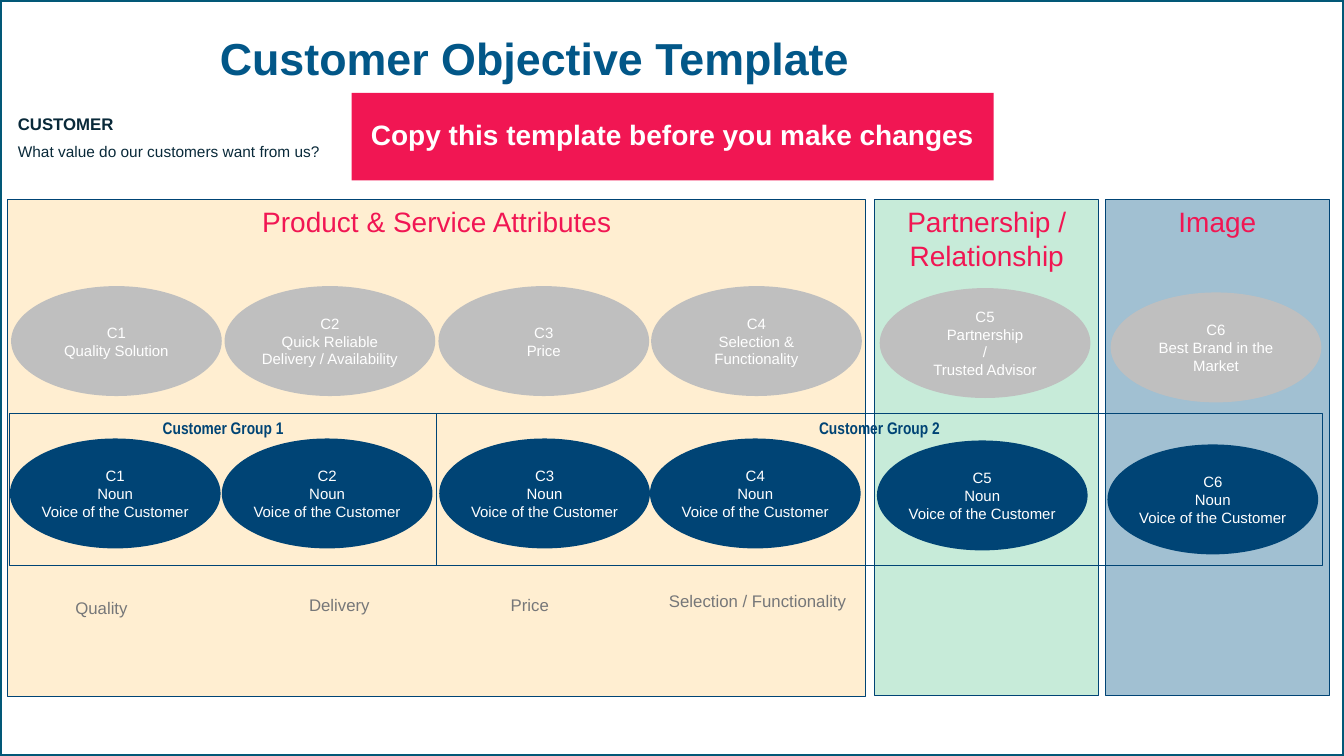
from lxml.etree import SubElement
from pptx import Presentation
from pptx.dml.color import RGBColor
from pptx.enum.shapes import MSO_SHAPE
from pptx.enum.text import MSO_ANCHOR, MSO_AUTO_SIZE, PP_ALIGN
from pptx.oxml.ns import qn
from pptx.util import Cm, Pt

FRAME = RGBColor(0x02, 0x58, 0x77)
TITLE = RGBColor(0x02, 0x57, 0x88)
NAVY = RGBColor(0x00, 0x44, 0x75)
PINK = RGBColor(0xF1, 0x16, 0x53)
MINT = RGBColor(0xC7, 0xEB, 0xD9)
AMBER = RGBColor(0xFF, 0xAA, 0x1B)
BLUE = RGBColor(0x00, 0x56, 0x87)
SILVER = RGBColor(0xBF, 0xBF, 0xBF)
GREY = RGBColor(0x76, 0x77, 0x79)
INK = RGBColor(0x09, 0x29, 0x39)
WHITE = RGBColor(0xFF, 0xFF, 0xFF)

WIDTH, HEIGHT = 33.87, 19.05
OVAL_WIDTH, OVAL_HEIGHT = 5.31, 2.77

# Objectives: code, then (left, top, lines) of the example and of the blank noun
EXAMPLES = [
    (0.28, 7.21, ["Quality Solution"]),
    (5.66, 7.21, ["Quick Reliable Delivery / Availability"]),
    (11.05, 7.21, ["Price"]),
    (16.41, 7.21, ["Selection & Functionality"]),
    (22.17, 7.26, ["Partnership", "/", "Trusted Advisor"]),
    (27.99, 7.37, ["Best Brand in the Market"]),
]
NOUN_PLACES = [(0.25, 11.05), (5.59, 11.05), (11.07, 11.05),
               (16.38, 11.05), (22.1, 11.1), (27.91, 11.2)]
NOUN_LINES = ["Noun", "Voice of the Customer"]

# Labels under the ovals: text, left, top, width
LABELS = [
    ("Quality", 1.65, 14.94, 1.83),
    ("Delivery", 7.54, 14.86, 2.06),
    ("Price", 12.62, 14.86, 1.47),
    ("Selection / Functionality", 16.61, 14.76, 5.0),
]


def write(para, text, size, color, bold=False, font="Arial", align=PP_ALIGN.CENTER):
    para.alignment = align
    span = para.add_run()
    span.text = text
    span.font.name = font
    span.font.size = Pt(size)
    span.font.bold = bold
    span.font.color.rgb = color


def add_block(page, kind, place, fill=None, opacity=100, line=None, weight=0.75):
    block = page.shapes.add_shape(kind, *[Cm(length) for length in place])
    block.shadow.inherit = False
    if fill is None:
        block.fill.background()
    else:
        block.fill.solid()
        block.fill.fore_color.rgb = fill
        if opacity < 100:
            color = block.fill._xPr.find(qn("a:solidFill"))[0]
            SubElement(color, qn("a:alpha"), val=str(opacity * 1000))
    if line is None:
        block.line.fill.background()
    else:
        block.line.color.rgb = line
        block.line.width = Pt(weight)
    block.text_frame.word_wrap = True
    return block


def add_panel(page, heading, place, fill, opacity=100):
    panel = add_block(page, MSO_SHAPE.RECTANGLE, place, fill, opacity, NAVY)
    panel.text_frame.vertical_anchor = MSO_ANCHOR.TOP
    write(panel.text_frame.paragraphs[0], heading, 20, PINK)


def add_group(page, heading, left, width):
    group = add_block(page, MSO_SHAPE.RECTANGLE, (left, 10.41, width, 3.84), line=NAVY)
    group.text_frame.vertical_anchor = MSO_ANCHOR.TOP
    write(group.text_frame.paragraphs[0], heading, 12, NAVY, True, "Arial Narrow")


def add_oval(page, left, top, lines, fill):
    oval = add_block(page, MSO_SHAPE.OVAL, (left, top, OVAL_WIDTH, OVAL_HEIGHT), fill)
    frame = oval.text_frame
    frame.margin_left = frame.margin_right = 0
    frame.vertical_anchor = MSO_ANCHOR.MIDDLE
    for index, text in enumerate(lines):
        para = frame.add_paragraph() if index else frame.paragraphs[0]
        write(para, text, 10.7, WHITE)


def add_text(page, place, wrap):
    box = page.shapes.add_textbox(*[Cm(length) for length in place])
    box.text_frame.word_wrap = wrap
    box.text_frame.auto_size = MSO_AUTO_SIZE.SHAPE_TO_FIT_TEXT
    return box.text_frame


def set_title(page, text):
    title = page.shapes.title
    title.left, title.top = Cm(0.94), Cm(0.71)
    title.width, title.height = Cm(25.07), Cm(1.63)
    frame = title.text_frame
    frame.auto_size = MSO_AUTO_SIZE.NONE
    frame.vertical_anchor = MSO_ANCHOR.MIDDLE
    frame.paragraphs[0].line_spacing = 0.9
    write(frame.paragraphs[0], text, 32, TITLE, True)


def add_question(page):
    frame = add_text(page, (0.2, 2.74, 15.09, 1.47), True)
    write(frame.paragraphs[0], "CUSTOMER", 12, INK, True, align=PP_ALIGN.LEFT)
    para = frame.add_paragraph()
    para.space_before = Pt(6)
    write(para, "What value do our customers want from us?", 11, INK, align=PP_ALIGN.LEFT)


def add_banner(page, text):
    banner = add_block(page, MSO_SHAPE.RECTANGLE, (8.86, 2.34, 16.18, 2.21), PINK)
    banner.text_frame.vertical_anchor = MSO_ANCHOR.MIDDLE
    banner.text_frame.paragraphs[0].line_spacing = 0.9
    write(banner.text_frame.paragraphs[0], text, 20, WHITE, True)


def main():
    deck = Presentation()
    deck.slide_width, deck.slide_height = Cm(WIDTH), Cm(HEIGHT)
    page = deck.slides.add_slide(deck.slide_layouts[5])

    # Frame and title
    add_block(page, MSO_SHAPE.RECTANGLE, (0, 0, WIDTH, HEIGHT), line=FRAME, weight=3)
    set_title(page, "Customer Objective Template")

    # Value proposition panels
    add_panel(page, "Partnership / Relationship", (22.05, 5.03, 5.64, 12.5), MINT)
    add_panel(page, "Product & Service Attributes", (0.2, 5.03, 21.62, 12.52), AMBER, 20)
    add_panel(page, "Image", (27.86, 5.03, 5.64, 12.5), BLUE, 37)

    # Customer groups
    add_group(page, "Customer Group 1", 0.25, 10.75)
    add_group(page, "Customer Group 2", 11.0, 22.33)

    # Objectives
    for number, (left, top) in enumerate(NOUN_PLACES, 1):
        add_oval(page, left, top, [f"C{number}"] + NOUN_LINES, NAVY)
    for number, (left, top, lines) in enumerate(EXAMPLES, 1):
        add_oval(page, left, top, [f"C{number}"] + lines, SILVER)

    # Labels
    for text, left, top, width in LABELS:
        frame = add_text(page, (left, top, width, 0.76), False)
        write(frame.paragraphs[0], text, 12, GREY, align=PP_ALIGN.LEFT)

    # Question and banner
    add_question(page)
    add_banner(page, "Copy this template before you make changes")

    deck.save("out.pptx")


if __name__ == "__main__":
    main()
